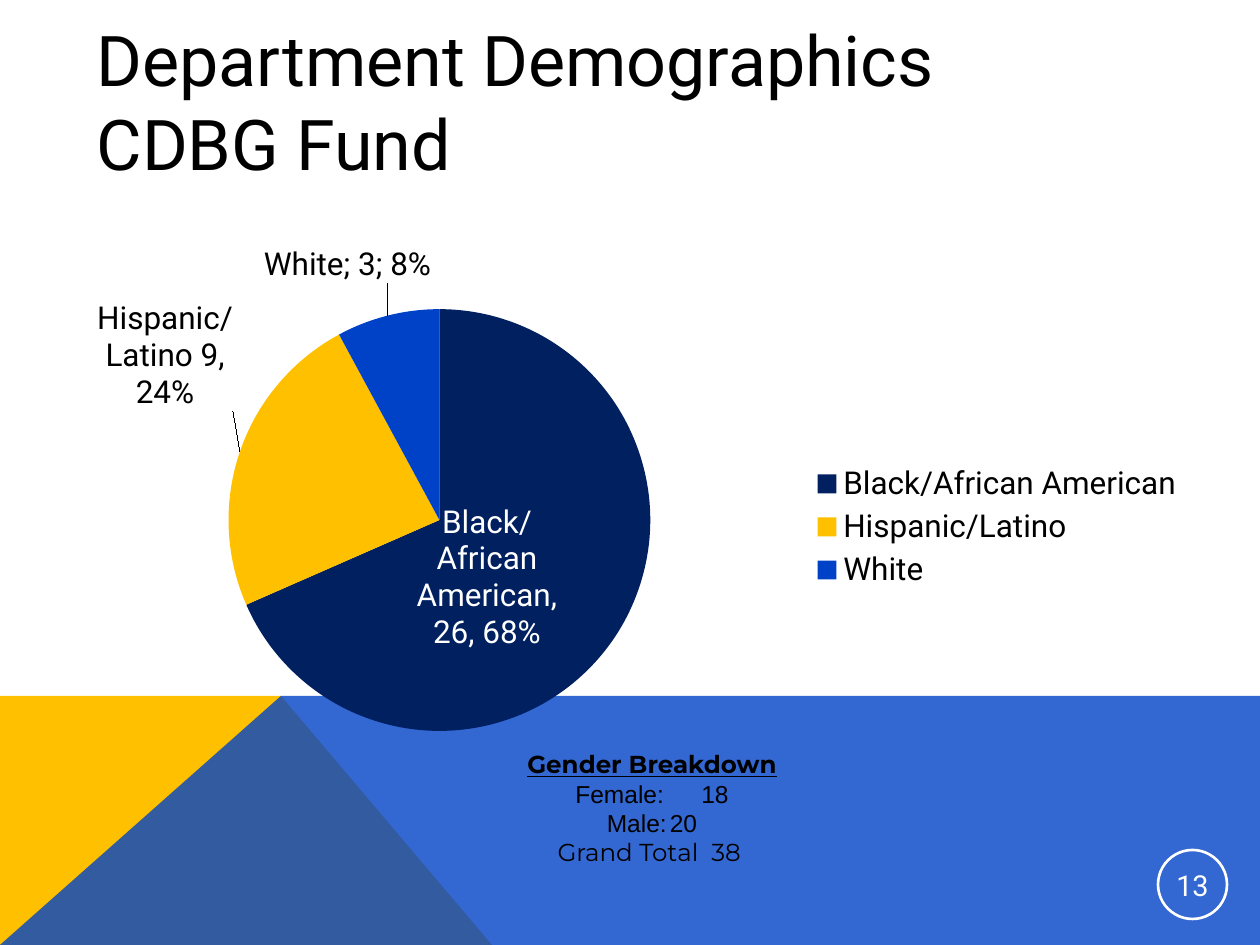
from lxml import etree
from pptx import Presentation
from pptx.chart.data import CategoryChartData
from pptx.dml.color import RGBColor
from pptx.enum.chart import XL_CHART_TYPE, XL_LABEL_POSITION, XL_LEGEND_POSITION
from pptx.enum.shapes import MSO_SHAPE
from pptx.enum.text import MSO_ANCHOR, MSO_AUTO_SIZE, PP_ALIGN
from pptx.oxml.ns import qn
from pptx.util import Emu, Pt

PIE = XL_CHART_TYPE.PIE
OUTSIDE, CENTERED = XL_LABEL_POSITION.OUTSIDE_END, XL_LABEL_POSITION.CENTER
LEGEND_RIGHT = XL_LEGEND_POSITION.RIGHT
OVAL = MSO_SHAPE.OVAL
TOP, MIDDLE = MSO_ANCHOR.TOP, MSO_ANCHOR.MIDDLE
NO_AUTOFIT = MSO_AUTO_SIZE.NONE
LEFT, CENTER = PP_ALIGN.LEFT, PP_ALIGN.CENTER

PX_PER_INCH = 126
EMU_PER_PX = 914400 / PX_PER_INCH
WIDTH, HEIGHT = 1260, 945
BLACK, WHITE = "000000", "FFFFFF"
NAVY, GOLD, BLUE = "002060", "FFC000", "0042C7"


def px(length):
    return Emu(round(length * EMU_PER_PX))


def rgb(value):
    return RGBColor.from_string(value)


def manual_layout(**fractions):
    """Chart layout element; values are fractions of the chart area."""
    layout = etree.Element(qn("c:layout"))
    manual = etree.SubElement(layout, qn("c:manualLayout"))
    for tag, value in fractions.items():
        etree.SubElement(manual, qn(f"c:{tag}")).set("val", str(value))
    return layout


class DemographicsSlide:
    font = "Roboto"

    def __init__(self, presentation):
        self.slide = presentation.slides.add_slide(presentation.slide_layouts[5])
        self.shapes = self.slide.shapes

    def style(self, font, size, color, name=None, bold=False, underline=False):
        font.name = name or self.font
        font.size = Pt(size)
        font.color.rgb = rgb(color)
        font.bold, font.underline = bold, underline

    def fill_frame(self, frame, lines, align, anchor=TOP):
        """Fill a frame from (text, style) pairs, one paragraph each."""
        frame.word_wrap = True
        frame.auto_size = NO_AUTOFIT
        frame.vertical_anchor = anchor
        for index, (text, look) in enumerate(lines):
            paragraph = frame.paragraphs[0] if index == 0 else frame.add_paragraph()
            paragraph.alignment = align
            run = paragraph.add_run()
            run.text = text
            self.style(run.font, **look)

    def title(self, box, lines):
        heading = self.shapes.title
        heading.left, heading.top, heading.width, heading.height = map(px, box)
        look = dict(size=40, color=BLACK)
        self.fill_frame(heading.text_frame, [(line, look) for line in lines], LEFT)

    def text(self, box, lines):
        block = self.shapes.add_textbox(*map(px, box))
        self.fill_frame(block.text_frame, lines, CENTER)

    def polygon(self, points, color, opacity=100):
        builder = self.shapes.build_freeform(*points[0], scale=EMU_PER_PX)
        builder.add_line_segments(points[1:], close=True)
        area = builder.convert_to_shape()
        area.shadow.inherit = False
        area.fill.solid()
        area.fill.fore_color.rgb = rgb(color)
        area.line.fill.background()
        if opacity < 100:
            fill_color = area._element.spPr.find(f".//{qn('a:srgbClr')}")
            etree.SubElement(fill_color, qn("a:alpha")).set("val", str(opacity * 1000))

    def page_number(self, box, number):
        ring = self.shapes.add_shape(OVAL, *map(px, box))
        ring.shadow.inherit = False
        ring.fill.background()
        ring.line.color.rgb = rgb(WHITE)
        ring.line.width = Pt(1.5)
        frame = ring.text_frame
        frame.margin_left = frame.margin_right = px(1)
        frame.margin_top = frame.margin_bottom = px(1)
        self.fill_frame(frame, [(number, dict(size=16.5, color=WHITE))], CENTER, MIDDLE)

    def pie(self, box, plot_box, slices):
        """Slices are (category, value, fill, label, label colour, place, shift)."""
        data = CategoryChartData()
        data.categories = [entry[0] for entry in slices]
        data.add_series("Series 1", [entry[1] for entry in slices])
        chart = self.shapes.add_chart(PIE, *map(px, box), data).chart
        chart.has_title = False
        self.style(chart.font, 18, BLACK)
        chart.has_legend = True
        chart.legend.position = LEGEND_RIGHT
        chart.legend.include_in_layout = False

        left, top, width, height = box
        x, y, w, h = plot_box
        area = chart._chartSpace.find(f".//{qn('c:plotArea')}")
        for automatic in area.findall(qn("c:layout")):
            area.remove(automatic)
        area.insert(0, manual_layout(
            layoutTarget="inner", xMode="edge", yMode="edge",
            x=round((x - left) / width, 3), y=round((y - top) / height, 3),
            w=round(w / width, 3), h=round(h / height, 3)))

        plot = chart.plots[0]
        plot.vary_by_categories = True
        series = plot.series[0]
        labels = series.data_labels
        labels.show_value = labels.show_percentage = labels.show_category_name = True
        labels.show_leader_lines = True
        for index, (_, _, fill, label, color, place, shift) in enumerate(slices):
            point = series.points[index]
            point.format.fill.solid()
            point.format.fill.fore_color.rgb = rgb(fill)
            if label:
                run = point.data_label.text_frame.paragraphs[0].add_run()
                run.text = label
                self.style(run.font, 18, color)
            else:
                self.style(point.data_label.font, 18, color)
            point.data_label.position = place
            self.finish_label(series, index, shift[0] / width, shift[1] / height)

    def finish_label(self, series, index, dx, dy):
        """Show category, value and percent, and shift the label."""
        node = series._element.findall(f".//{qn('c:dLbl')}")[index]
        node.insert(1, manual_layout(x=round(dx, 3), y=round(dy, 3)))
        for part in ("showVal", "showCatName", "showPercent"):
            node.find(qn(f"c:{part}")).set("val", "1")
        etree.SubElement(node, qn("c:separator")).text = "; "


def main():
    presentation = Presentation()
    presentation.slide_width, presentation.slide_height = px(WIDTH), px(HEIGHT)
    page = DemographicsSlide(presentation)

    horizon, peak = 696, 281
    page.polygon([(0, HEIGHT), (0, horizon), (peak, horizon), (492, HEIGHT)], GOLD)
    page.polygon([(0, HEIGHT), (peak, horizon), (WIDTH, horizon), (WIDTH, HEIGHT)],
                 BLUE, opacity=80)
    page.title((84, 10, 987, 183), ["Department Demographics", "CDBG Fund"])
    page.pie((63, 215, 1134, 624), (229, 309, 422, 422), [
        ("Black/African American", 26, NAVY, "Black/African American, 26, 68%",
         WHITE, CENTERED, (-41, 0)),
        ("Hispanic/Latino", 9, GOLD, "Hispanic/Latino 9, 24%",
         BLACK, OUTSIDE, (0, -38)),
        ("White", 3, BLUE, None, BLACK, OUTSIDE, (45, -25)),
    ])
    page.page_number((1158, 850, 69, 69), "13")

    heading = dict(size=14, color=BLACK, name="Montserrat", bold=True, underline=True)
    count = dict(size=14, color=BLACK, name="Arial")
    total = dict(size=14, color=BLACK, name="Montserrat")
    page.text((396, 743, 512, 190), [
        ("Gender Breakdown", heading),
        ("Female:\t18", count),
        ("Male:\t20", count),
        ("Grand Total  38\t", total),
    ])
    presentation.save("out.pptx")


if __name__ == "__main__":
    main()
